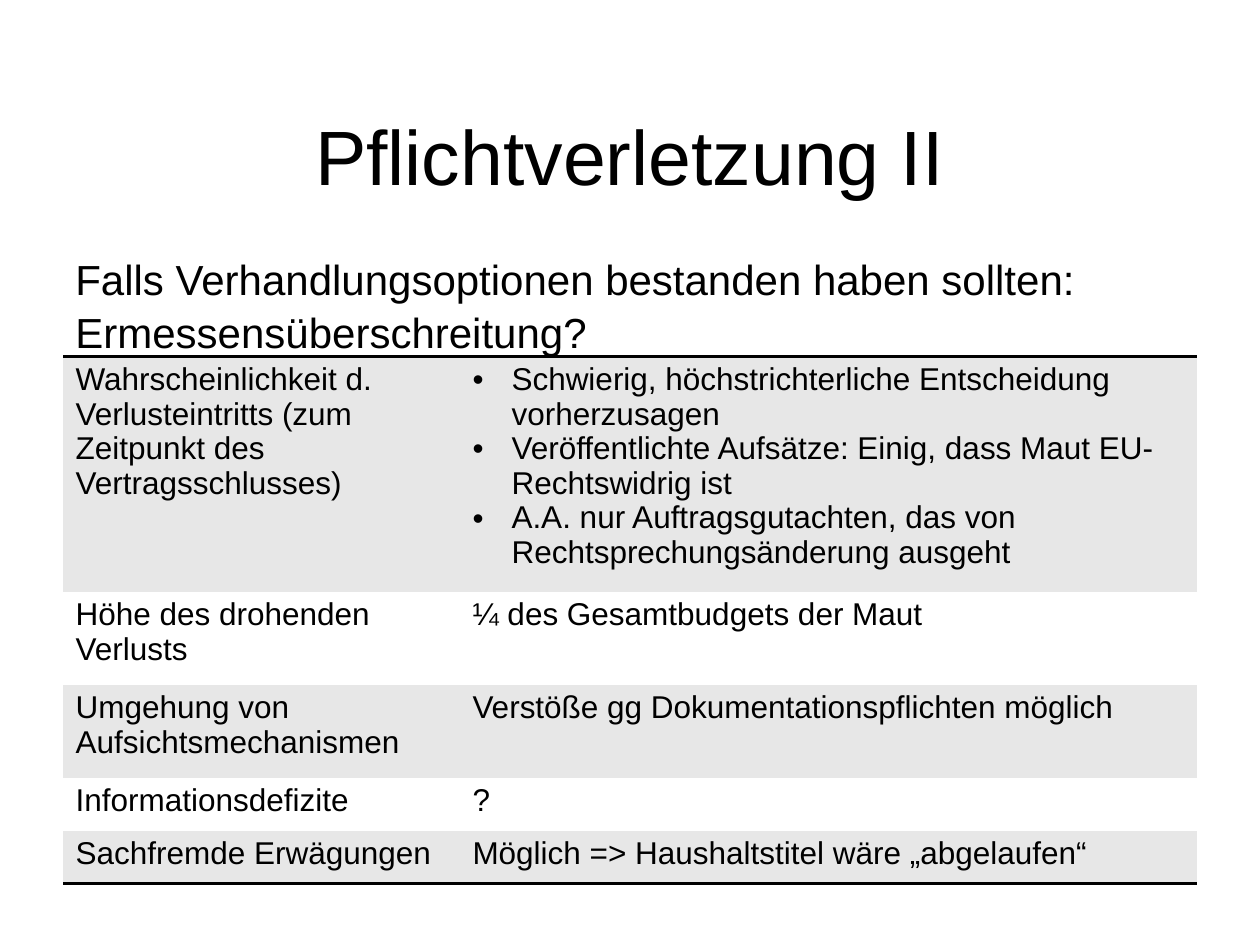
import lxml.etree
import pptx
import pptx.dml.color
import pptx.enum.text
import pptx.oxml.ns
import pptx.util

Inches = pptx.util.Inches
Pt = pptx.util.Pt
qn = pptx.oxml.ns.qn

COLORS = {"text": "000000", "band": "E7E7E7", "plain": "FFFFFF", "rule": "000000"}
TITLE = "Pflichtverletzung II"
QUESTION = "Falls Verhandlungsoptionen bestanden haben sollten: Ermessensüberschreitung?"
CRITERIA = [
    ("Wahrscheinlichkeit d. Verlusteintritts (zum Zeitpunkt des Vertragsschlusses)", [
        "Schwierig, höchstrichterliche Entscheidung vorherzusagen",
        "Veröffentlichte Aufsätze: Einig, dass Maut EU-Rechtswidrig ist",
        "A.A. nur Auftragsgutachten, das von Rechtsprechungsänderung ausgeht",
    ]),
    ("Höhe des drohenden Verlusts", ["¼ des Gesamtbudgets der Maut"]),
    ("Umgehung von Aufsichtsmechanismen", ["Verstöße gg Dokumentationspflichten möglich"]),
    ("Informationsdefizite", ["?"]),
    ("Sachfremde Erwägungen", ["Möglich => Haushaltstitel wäre „abgelaufen“"]),
]
COLUMN_WIDTHS = [3.15, 5.85]
ROW_HEIGHTS = [1.79, 0.74, 0.74, 0.42, 0.42]
LEFT, WIDTH = 0.5, 9
PLAIN_TABLE_STYLE = "{2D5ABB26-0587-4C30-8999-92F81FD0307C}"


def color(name):
    return pptx.dml.color.RGBColor.from_string(COLORS[name])


def format_paragraph(paragraph, size, **layout):
    for name, value in layout.items():
        setattr(paragraph, name, value)
    for name, value in {"name": "Arial", "size": Pt(size)}.items():
        setattr(paragraph.font, name, value)
    paragraph.font.color.rgb = color("text")


def add_bullet(paragraph):
    properties = paragraph._p.get_or_add_pPr()
    indent = Inches(0.31)
    properties.set("marL", str(indent))
    properties.set("indent", str(-indent))
    lxml.etree.SubElement(properties, qn("a:buFont"), typeface="Arial")
    lxml.etree.SubElement(properties, qn("a:buChar"), char="•")


def add_rule(cell, side):
    line = lxml.etree.Element(qn(f"a:ln{side}"), w=str(Pt(2)))
    fill = lxml.etree.SubElement(line, qn("a:solidFill"))
    lxml.etree.SubElement(fill, qn("a:srgbClr"), val=COLORS["rule"])
    cell._tc.get_or_add_tcPr().insert(0, line)


def fill_cell(cell, lines, fill_name):
    cell.fill.solid()
    cell.fill.fore_color.rgb = color(fill_name)
    cell.text = "\n".join(lines)
    for paragraph in cell.text_frame.paragraphs:
        if len(lines) > 1:
            add_bullet(paragraph)
        format_paragraph(paragraph, 18, line_spacing=0.98)


def add_title(slide):
    title = slide.shapes.title
    place = {"left": LEFT, "top": 0.6, "width": WIDTH, "height": 1.25}
    for name, value in place.items():
        setattr(title, name, Inches(value))
    title.text = TITLE
    title.text_frame.vertical_anchor = pptx.enum.text.MSO_ANCHOR.MIDDLE
    format_paragraph(title.text_frame.paragraphs[0], 44,
                     alignment=pptx.enum.text.PP_ALIGN.CENTER)


def add_question(slide):
    box = slide.shapes.add_textbox(Inches(LEFT), Inches(1.94), Inches(WIDTH), Inches(0.89))
    box.text_frame.word_wrap = True
    box.text_frame.text = QUESTION
    format_paragraph(box.text_frame.paragraphs[0], 24, line_spacing=1.05)


def add_criteria(slide):
    frame = slide.shapes.add_table(len(CRITERIA), len(COLUMN_WIDTHS), Inches(LEFT),
                                   Inches(2.83), Inches(WIDTH), Inches(sum(ROW_HEIGHTS)))
    table = frame.table
    table._tbl.tblPr.find(qn("a:tableStyleId")).text = PLAIN_TABLE_STYLE
    table.first_row = table.horz_banding = False
    for column, width in zip(table.columns, COLUMN_WIDTHS):
        column.width = Inches(width)
    for index, (criterion, findings) in enumerate(CRITERIA):
        row = table.rows[index]
        row.height = Inches(ROW_HEIGHTS[index])
        fill_name = "plain" if index % 2 else "band"
        for cell, lines in zip(row.cells, ([criterion], findings)):
            fill_cell(cell, lines, fill_name)
    for row_index, side in ((0, "T"), (len(CRITERIA) - 1, "B")):
        for cell in table.rows[row_index].cells:
            add_rule(cell, side)


def main():
    presentation = pptx.Presentation()
    presentation.slide_width = Inches(10)
    presentation.slide_height = Inches(7.5)
    slide = presentation.slides.add_slide(presentation.slide_layouts[5])
    add_title(slide)
    add_question(slide)
    add_criteria(slide)
    presentation.save("out.pptx")


if __name__ == "__main__":
    main()
